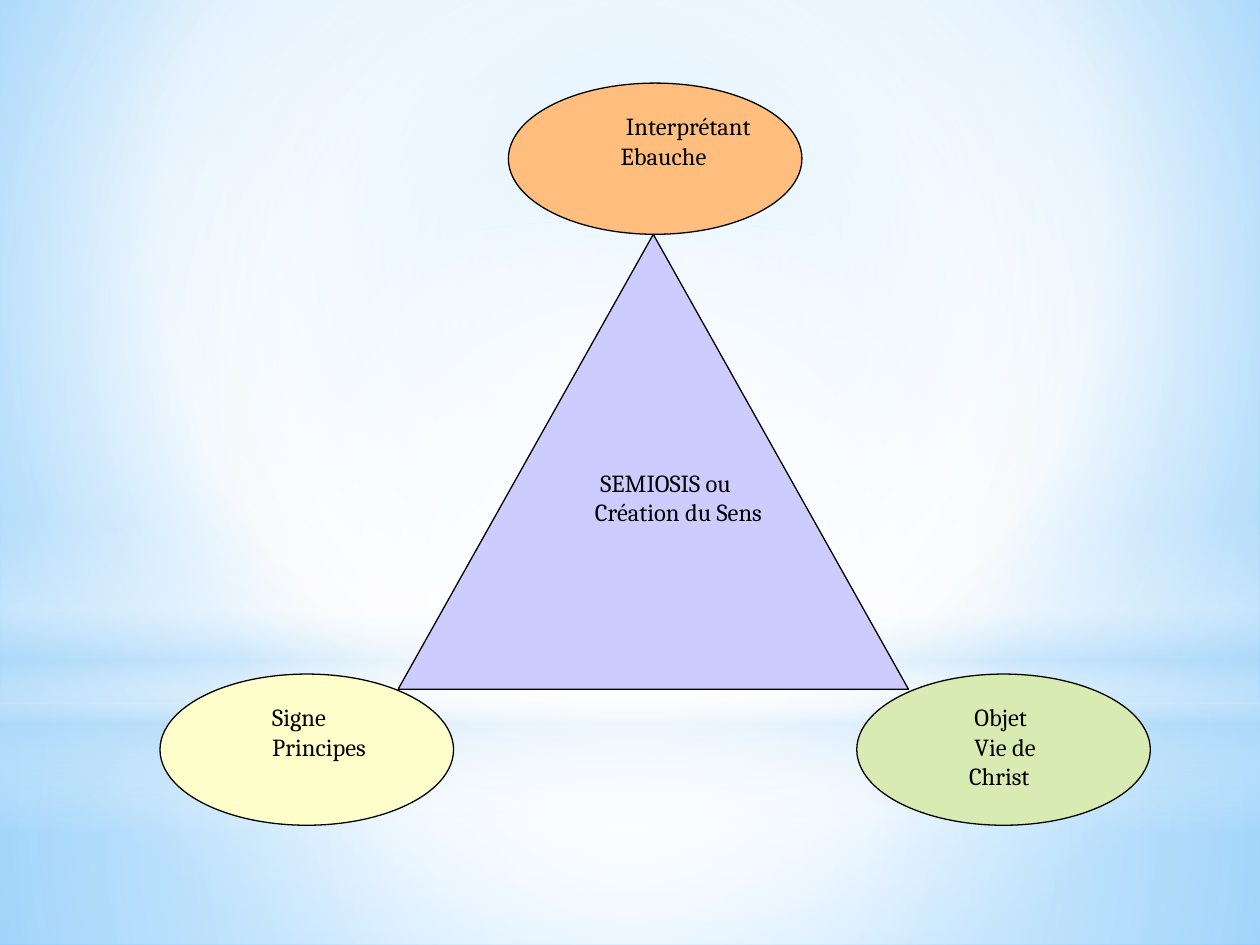
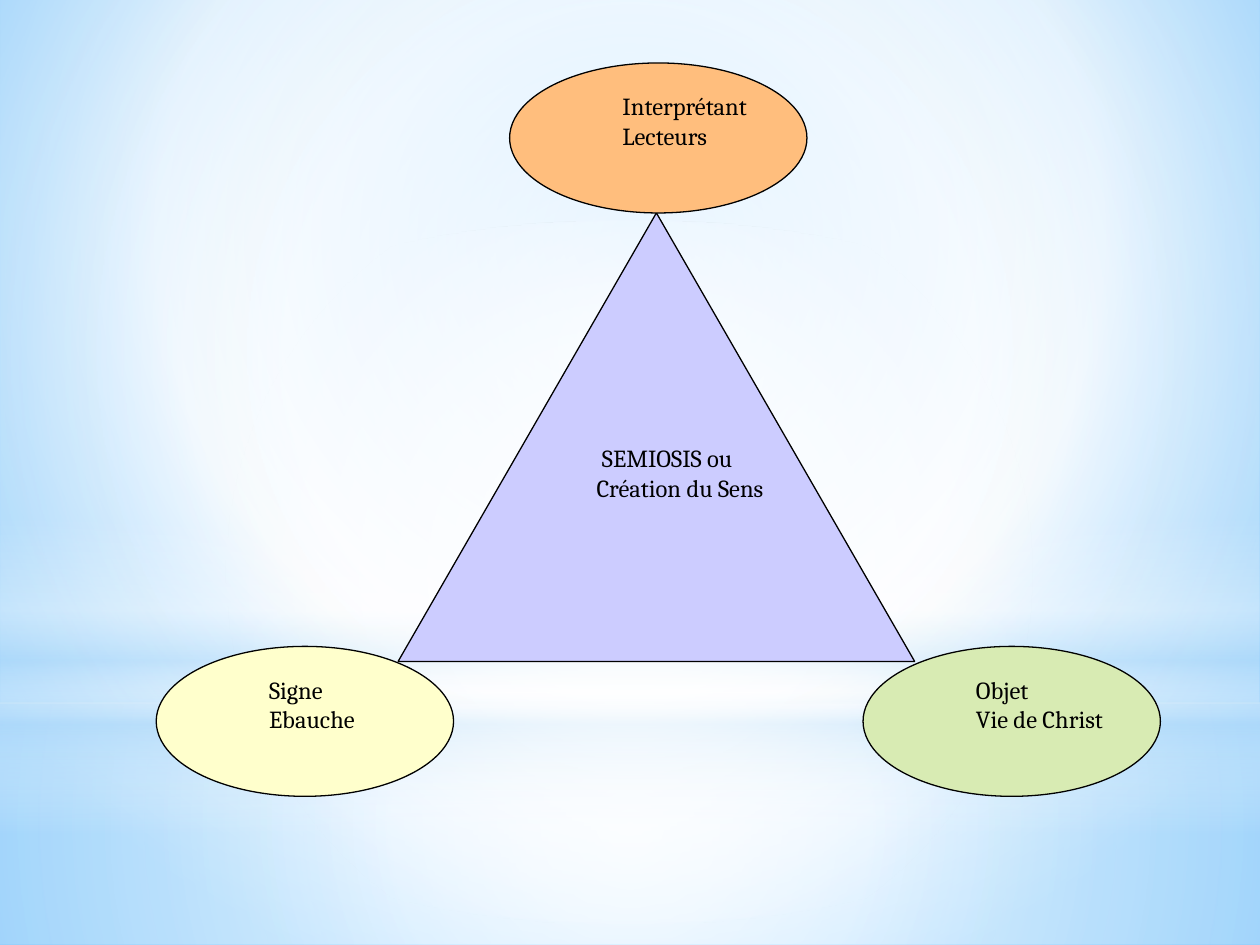
from dataclasses import dataclass
from lxml.etree import SubElement
from pptx import Presentation
from pptx.dml.color import RGBColor
from pptx.enum.shapes import MSO_SHAPE
from pptx.enum.text import MSO_ANCHOR, PP_ALIGN
from pptx.oxml.ns import qn
from pptx.util import Inches, Pt

COLORS = {
    "sky": "9ED5FF",
    "deep_sky": "5BB9FF",
    "mist": "B4DCFA",
    "white": "FFFFFF",
    "ink": "000000",
    "triangle": "CCCCFF",
    "sign": "FFFFCC",
    "interpretant": "FFBE7D",
    "object": "D8EBB3",
}
FONT = "Cambria"
CENTER = (50, 50, 50, 50)
INSET = 0.05
OVERLAP_LEFT, OVERLAP_RIGHT, OVERLAP_BOTTOM = 0.44, 0.41, 0.12
MEANING = (" SEMIOSIS ou", "Création du Sens")


@dataclass
class Box:
    """A rectangle in inches."""
    left: float
    top: float
    width: float
    height: float

    def lengths(self):
        """Return the four sides as slide lengths."""
        return [Inches(side) for side in (self.left, self.top, self.width, self.height)]


BANDS = (
    (MSO_SHAPE.RECTANGLE, Box(0, 5.58, 10, 1.92), CENTER,
     ((0, "white", 91), (37, "white", 76), (100, "mist", 79))),
    (MSO_SHAPE.RECTANGLE, Box(0, 0, 10, 5.58), CENTER,
     ((0, "white", 89), (48, "white", 62), (100, "mist", 79))),
    (MSO_SHAPE.RECTANGLE, Box(0, 4.12, 10, 2.5), None,
     ((0, "white", 0), (29, "white", 30), (45, "mist", 40),
      (55, "white", 26), (65, "mist", 60), (100, "white", 0))),
    (MSO_SHAPE.OVAL, Box(0, 1.75, 10, 5.58), CENTER,
     ((0, "white", 100), (56, "white", 0))),
)


def rgb(name):
    """Look up a named colour."""
    return RGBColor.from_string(COLORS[name])


def set_gradient(properties, stops, focus=None):
    """Replace a solid fill with a circular gradient, or a vertical one without focus."""
    solid = properties.find(qn("a:solidFill"))
    gradient = SubElement(properties, qn("a:gradFill"), rotWithShape="1")
    properties.replace(solid, gradient)
    stop_list = SubElement(gradient, qn("a:gsLst"))
    for position, name, alpha in stops:
        stop = SubElement(stop_list, qn("a:gs"), pos=str(position * 1000))
        color = SubElement(stop, qn("a:srgbClr"), val=COLORS[name])
        if alpha < 100:
            SubElement(color, qn("a:alpha"), val=str(alpha * 1000))
    if focus:
        circle = SubElement(gradient, qn("a:path"), path="circle")
        sides = {side: str(value * 1000) for side, value in zip("ltrb", focus)}
        SubElement(circle, qn("a:fillToRect"), **sides)
    else:
        SubElement(gradient, qn("a:lin"), ang="5400000", scaled="0")


def add_filled_shape(shapes, kind, box, color):
    """Add a flat preset shape in one colour."""
    shape = shapes.add_shape(kind, *box.lengths())
    shape.shadow.inherit = False
    shape.fill.solid()
    shape.fill.fore_color.rgb = rgb(color)
    return shape


def style_master(master, page):
    """Give the master its sky background and soft light bands."""
    master.background.fill.solid()
    set_gradient(master.element.find(".//" + qn("p:bgPr")),
                 ((0, "sky", 100), (60, "white", 100), (100, "deep_sky", 100)),
                 (20, 10, 20, 60))
    tree = master.shapes.element
    for index, (kind, box, focus, stops) in enumerate(BANDS):
        band = add_filled_shape(page.shapes, kind, box, "white")
        band.line.fill.background()
        set_gradient(band.element.spPr, stops, focus)
        band.element.nvSpPr.cNvPr.set("id", str(100 + index))
        tree.insert(2 + index, band.element)


def write_line(para, text, size=14, color="ink", font=FONT, indent=0.5):
    """Write one indented line of text."""
    para.level = 1
    para.alignment = PP_ALIGN.LEFT
    properties = para._p.get_or_add_pPr()
    properties.set("marL", str(Inches(indent)))
    properties.set("indent", "0")
    span = para.add_run()
    span.text = text
    span.font.size = Pt(size)
    span.font.name = font
    span.font.color.rgb = rgb(color)


def add_labelled_shape(shapes, kind, box, color, lines):
    """Add an outlined shape holding lines of text from its top."""
    shape = add_filled_shape(shapes, kind, box, color)
    shape.line.color.rgb = rgb("ink")
    shape.line.width = Pt(0.75)
    frame = shape.text_frame
    frame.word_wrap = True
    frame.vertical_anchor = MSO_ANCHOR.TOP
    frame.margin_left = frame.margin_right = Inches(INSET)
    frame.margin_top = frame.margin_bottom = Inches(INSET)
    for index, text in enumerate(lines):
        para = frame.add_paragraph() if index else frame.paragraphs[0]
        write_line(para, text)


def add_semiosis(page, box, node_width, node_height, sign, interpretant, thing):
    """Draw the triangle of meaning with an oval at each corner."""
    shapes = page.shapes.add_group_shape().shapes
    right = box.left + box.width - node_width
    bottom = box.top + box.height - node_height
    middle = (box.left + right) / 2
    base_left = box.left + node_width - OVERLAP_LEFT
    apex = box.top + node_height
    triangle = Box(base_left, apex, right + OVERLAP_RIGHT - base_left,
                   bottom + OVERLAP_BOTTOM - apex)
    add_labelled_shape(shapes, MSO_SHAPE.ISOSCELES_TRIANGLE, triangle, "triangle", MEANING)
    for left, top, color, lines in (
        (box.left, bottom, "sign", sign),
        (middle, box.top, "interpretant", interpretant),
        (right, bottom, "object", thing),
    ):
        node = Box(left, top, node_width, node_height)
        add_labelled_shape(shapes, MSO_SHAPE.OVAL, node, color, lines)


def main():
    """Build and save the deck."""
    deck = Presentation()
    deck.slide_width, deck.slide_height = Inches(10), Inches(7.5)
    blank = deck.slide_layouts[6]
    principles, readers = [deck.slides.add_slide(blank) for _ in range(2)]
    style_master(deck.slide_master, principles)
    add_semiosis(principles, Box(1.27, 0.66, 7.86, 5.89), 2.33, 1.2,
                 sign=("Signe", "Principes"),
                 interpretant=(" Interprétant", "Ebauche"),
                 thing=(" Objet", " Vie de Christ"))
    add_semiosis(readers, Box(1.24, 0.5, 7.97, 5.82), 2.36, 1.19,
                 sign=("Signe", "Ebauche"),
                 interpretant=("Interprétant", "Lecteurs"),
                 thing=("Objet", "Vie de Christ"))
    deck.save("out.pptx")


if __name__ == "__main__":
    main()
